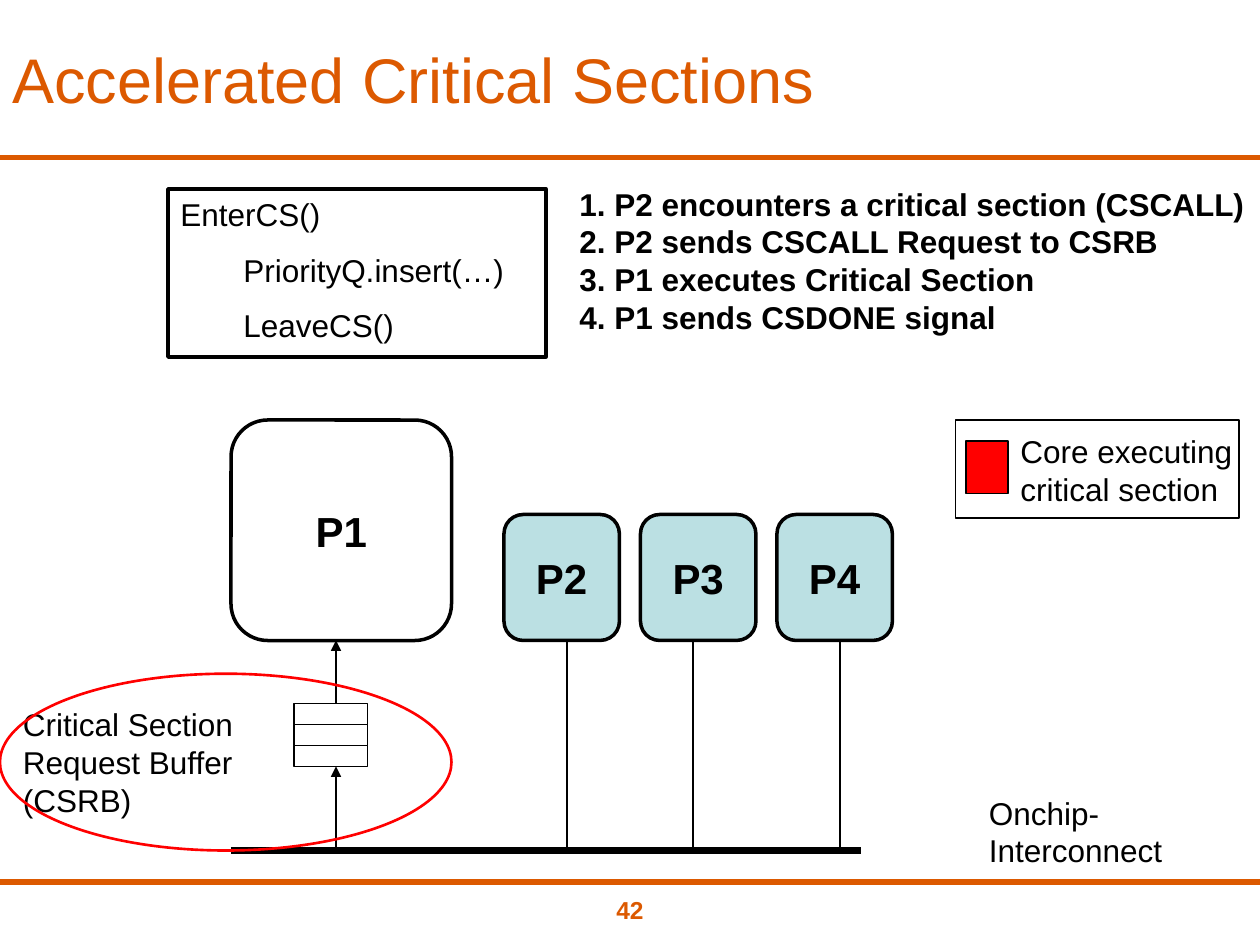
"""Builds the Accelerated Critical Sections slide."""
from pptx import Presentation
from pptx.dml.color import RGBColor
from pptx.enum.shapes import MSO_CONNECTOR, MSO_SHAPE
from pptx.enum.text import MSO_ANCHOR, PP_ALIGN
from pptx.oxml.ns import qn
from pptx.util import Pt
from lxml.etree import SubElement

ORANGE, BLACK, WHITE, RED, TEAL = "DC5900", "000000", "FFFFFF", "FF0000", "BBE0E3"


def rgb(color):
    return RGBColor.from_string(color)


class Deck:
    font = "Arial"

    def __init__(self, s):
        self.s = s

    def label(self, sp, lines, size=18, color=BLACK, bold=False, align=PP_ALIGN.LEFT,
              anchor=MSO_ANCHOR.TOP, wrap=True, gap=0, indent=0):
        tf = sp.text_frame
        tf.word_wrap = wrap
        tf.vertical_anchor = anchor
        for i, line in enumerate(lines):
            p = tf.paragraphs[0] if i == 0 else tf.add_paragraph()
            p.text = line
            p.alignment = align
            p.font.name, p.font.size, p.font.bold = self.font, Pt(size), bold
            p.font.color.rgb = rgb(color)
            if i:
                p.space_before = Pt(gap)
                p._p.get_or_add_pPr().set("marL", str(Pt(indent)))

    def text(self, x, y, w, h, lines, **style):
        sp = self.s.shapes.add_textbox(Pt(x), Pt(y), Pt(w), Pt(h))
        self.label(sp, lines, **style)

    def shape(self, kind, x, y, w, h, fill=None, line=BLACK, width=0.75):
        sp = self.s.shapes.add_shape(kind, Pt(x), Pt(y), Pt(w), Pt(h))
        sp.shadow.inherit = False
        if fill:
            sp.fill.solid()
            sp.fill.fore_color.rgb = rgb(fill)
        else:
            sp.fill.background()
        sp.line.color.rgb = rgb(line)
        sp.line.width = Pt(width)
        return sp

    def core(self, name, x, y, w, h, fill):
        sp = self.shape(MSO_SHAPE.ROUNDED_RECTANGLE, x, y, w, h, fill, width=2)
        self.label(sp, [name], size=24, bold=True, align=PP_ALIGN.CENTER,
                   anchor=MSO_ANCHOR.MIDDLE)

    def line(self, x1, y1, x2, y2, color=BLACK, width=0.75, arrow=False):
        c = self.s.shapes.add_connector(MSO_CONNECTOR.STRAIGHT, Pt(x1), Pt(y1), Pt(x2), Pt(y2))
        c.line.color.rgb = rgb(color)
        c.line.width = Pt(width)
        if arrow:
            SubElement(c.line._get_or_add_ln(), qn("a:tailEnd"), type="triangle")
        SubElement(c._element.spPr, qn("a:effectLst"))


def main():
    prs = Presentation()
    prs.slide_width, prs.slide_height = Pt(720), Pt(540)
    d = Deck(prs.slides.add_slide(prs.slide_layouts[6]))

    for y in (504, 90):
        d.line(0, y, 720, y, ORANGE, 3)
    d.text(276, 508, 168, 25, ["42"], size=14, color=ORANGE, bold=True, align=PP_ALIGN.CENTER)
    d.text(0, 0, 720, 90, ["Accelerated Critical Sections"], size=36, color=ORANGE,
           anchor=MSO_ANCHOR.MIDDLE)

    bus_y, core_y = 486, 366
    d.line(132, bus_y, 492, bus_y, width=4)
    code = d.shape(MSO_SHAPE.RECTANGLE, 96, 108, 216, 96, width=2)
    d.label(code, ["EnterCS()", "PriorityQ.insert(…)", "LeaveCS()"], gap=10, indent=36)
    d.text(558, 450, 162, 50, ["Onchip-Interconnect"])

    for i in range(3):
        d.shape(MSO_SHAPE.RECTANGLE, 168, 402 + 12 * i, 42, 12, WHITE)
    d.line(192, bus_y, 192, 438, arrow=True)
    d.line(192, 402, 192, core_y, arrow=True)
    d.text(6, 399.5, 150, 72, ["Critical Section\nRequest Buffer (CSRB)"])

    d.text(324, 102, 394.5, 94, ["1. P2 encounters a critical section (CSCALL)",
                                 "2. P2 sends CSCALL Request to CSRB",
                                 "3. P1 executes Critical Section",
                                 "4. P1 sends CSDONE signal"], bold=True, wrap=False)

    for x in (324, 396, 480):
        d.line(x, core_y, x, bus_y)

    d.shape(MSO_SHAPE.RECTANGLE, 552, 252, 24, 30, RED)
    d.shape(MSO_SHAPE.RECTANGLE, 546, 240, 162, 56)
    d.text(576, 243.5, 144, 50, ["Core executing critical section"])

    for i, name in enumerate(("P2", "P3", "P4")):
        d.core(name, 288 + 78 * i, 294, 66, 72, TEAL)
    d.core("P1", 132, 240, 126, 126, WHITE)
    d.shape(MSO_SHAPE.OVAL, 0, 385, 258, 101, line=RED, width=1.5)

    prs.save("out.pptx")


if __name__ == "__main__":
    main()
